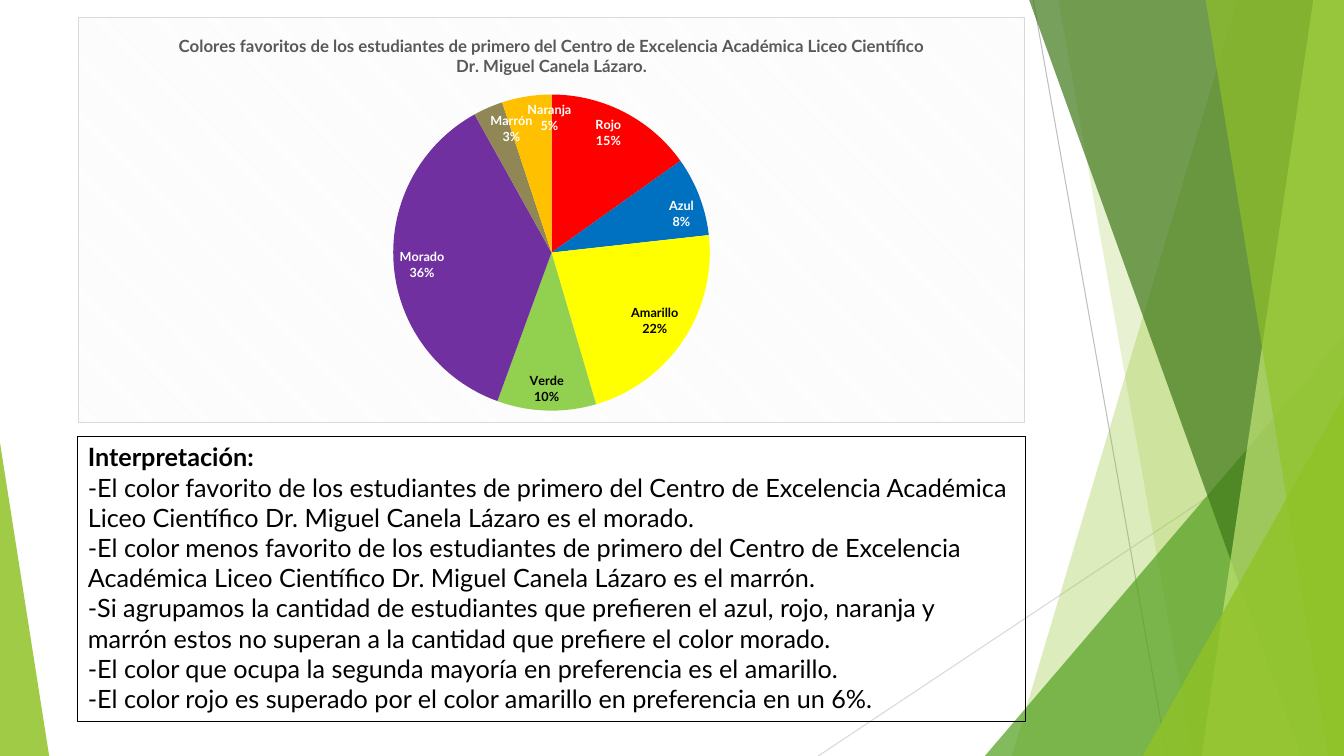
import pptx
import pptx.chart.data
import pptx.dml.color
import pptx.enum.chart
import pptx.enum.shapes
import pptx.enum.text
import pptx.oxml
import pptx.oxml.ns
import pptx.util
from lxml import etree

Cm, Pt = pptx.util.Cm, pptx.util.Pt
RGBColor = pptx.dml.color.RGBColor
qn = pptx.oxml.ns.qn

BLACK = RGBColor(0x00, 0x00, 0x00)
WHITE = RGBColor(0xFF, 0xFF, 0xFF)
TITLE_GRAY = RGBColor(0x59, 0x59, 0x59)
MID_GRAY = RGBColor(0xBF, 0xBF, 0xBF)
LIGHT_GRAY = RGBColor(0xD9, 0xD9, 0xD9)
LIME = RGBColor(0x90, 0xC2, 0x26)
PALE_LIME = RGBColor(0xC0, 0xE4, 0x74)
GREEN = RGBColor(0x54, 0xA0, 0x21)
DARK_GREEN = RGBColor(0x3F, 0x78, 0x19)

WIDTH, HEIGHT = 33.87, 19.05
SCHOOL = "Centro de Excelencia Académica Liceo Científico Dr. Miguel Canela Lázaro"

# category, percentage, slice colour, label colour
COLORS = [
    ("Rojo", 15, RGBColor(0xFF, 0x00, 0x00), WHITE),
    ("Azul", 8, RGBColor(0x00, 0x70, 0xC0), WHITE),
    ("Amarillo", 22, RGBColor(0xFF, 0xFF, 0x00), BLACK),
    ("Verde", 10, RGBColor(0x92, 0xD0, 0x50), BLACK),
    ("Morado", 36, RGBColor(0x70, 0x30, 0xA0), WHITE),
    ("Marrón", 3, RGBColor(0x91, 0x86, 0x55), WHITE),
    ("Naranja", 5, RGBColor(0xFF, 0xC0, 0x00), WHITE),
]

FINDINGS = [
    f"-El color favorito de los estudiantes de primero del {SCHOOL} es el morado.",
    f"-El color menos favorito de los estudiantes de primero del {SCHOOL} es el marrón.",
    "-Si agrupamos la cantidad de estudiantes que prefieren el azul, rojo, naranja y "
    "marrón estos no superan a la cantidad que prefiere el color morado.",
    "-El color que ocupa la segunda mayoría en preferencia es el amarillo.",
    "-El color rojo es superado por el color amarillo en preferencia en un 6%.",
]

CHART_AREA = """<c:spPr xmlns:c="http://schemas.openxmlformats.org/drawingml/2006/chart"
 xmlns:a="http://schemas.openxmlformats.org/drawingml/2006/main">
<a:pattFill prst="dkDnDiag"><a:fgClr><a:srgbClr val="F2F2F2"/></a:fgClr>
<a:bgClr><a:srgbClr val="FFFFFF"/></a:bgClr></a:pattFill>
<a:ln w="9525"><a:solidFill><a:srgbClr val="D9D9D9"/></a:solidFill></a:ln></c:spPr>"""


class Deck:
    font = "Lato"

    def __init__(self):
        self.prs = pptx.Presentation()
        self.prs.slide_width, self.prs.slide_height = Cm(WIDTH), Cm(HEIGHT)
        self.s = self.prs.slides.add_slide(self.prs.slide_layouts[1])
        title = self.s.shapes.title.element
        title.getparent().remove(title)

    def style(self, font, size, color, bold=False):
        font.name, font.size, font.bold = self.font, Pt(size), bold
        font.color.rgb = color

    def line(self, x1, y1, x2, y2, color):
        c = self.s.shapes.add_connector(
            pptx.enum.shapes.MSO_CONNECTOR.STRAIGHT, Cm(x1), Cm(y1), Cm(x2), Cm(y2))
        c.line.color.rgb, c.line.width = color, Pt(0.75)
        etree.SubElement(c.element.spPr, qn("a:effectLst"))

    def tint(self, sp, color, opacity):
        """Flat fill with an opacity in percent, no outline and no shadow."""
        sp.shadow.inherit = False
        sp.fill.solid()
        sp.fill.fore_color.rgb = color
        sp.line.fill.background()
        rgb = sp.element.spPr.find(qn("a:solidFill"))[0]
        etree.SubElement(rgb, qn("a:alpha")).set("val", str(opacity * 1000))

    def band(self, top_x, bottom_x, color, opacity):
        """Full-height band from a slanted left edge to the slide's right edge."""
        fb = self.s.shapes.build_freeform(Cm(top_x), Cm(-0.02))
        fb.add_line_segments([(Cm(WIDTH), Cm(-0.02)), (Cm(WIDTH), Cm(HEIGHT)),
                              (Cm(bottom_x), Cm(HEIGHT))], close=True)
        self.tint(fb.convert_to_shape(), color, opacity)

    def corner(self, x, y, w, apex, color, opacity):
        """Triangle standing on the bottom edge; apex 0 is left, 1 is right."""
        sp = self.s.shapes.add_shape(
            pptx.enum.shapes.MSO_SHAPE.ISOSCELES_TRIANGLE,
            Cm(x), Cm(y), Cm(w), Cm(HEIGHT - y))
        sp.adjustments[0] = apex
        self.tint(sp, color, opacity)

    def body(self, x, y, w, h, heading, items):
        sp = self.s.placeholders[1]
        self.s.shapes.element.append(sp.element)
        sp.left, sp.top, sp.width, sp.height = Cm(x), Cm(y), Cm(w), Cm(h)
        sp.line.color.rgb, sp.line.width = BLACK, Pt(0.75)
        tf = sp.text_frame
        tf.word_wrap = True
        tf.auto_size = pptx.enum.text.MSO_AUTO_SIZE.NONE
        for i, text in enumerate([heading] + items):
            p = tf.add_paragraph() if i else tf.paragraphs[0]
            p.space_before = Pt(0)
            pPr = p._p.get_or_add_pPr()
            pPr.set("marL", "0")
            pPr.set("indent", "0")
            etree.SubElement(pPr, qn("a:buNone"))
            r = p.add_run()
            r.text = text
            self.style(r.font, 18, BLACK, bold=i == 0)

    def pie(self, x, y, w, h, title, rows):
        data = pptx.chart.data.CategoryChartData()
        data.categories = [row[0] for row in rows]
        data.add_series("Series 1", [row[1] for row in rows])
        chart = self.s.shapes.add_chart(
            pptx.enum.chart.XL_CHART_TYPE.PIE, Cm(x), Cm(y), Cm(w), Cm(h), data).chart
        self.style(chart.font, 10, BLACK)
        chart.has_legend = False
        chart.has_title = True
        r = chart.chart_title.text_frame.paragraphs[0].add_run()
        r.text = title
        self.style(r.font, 12, TITLE_GRAY, bold=True)

        inside_end = pptx.enum.chart.XL_LABEL_POSITION.INSIDE_END
        series = chart.plots[0].series[0]
        labels = series.data_labels
        labels.show_percentage = labels.show_category_name = True
        labels.show_value = False
        labels.position = inside_end
        self.style(labels.font, 9, WHITE, bold=True)
        for i, (_, _, color, label_color) in enumerate(rows):
            point = series.points[i]
            point.format.fill.solid()
            point.format.fill.fore_color.rgb = color
            if label_color != WHITE:
                self.style(point.data_label.font, 9, label_color, bold=True)
                point.data_label.position = inside_end
        self.finish_pie(chart.element)

    def finish_pie(self, space):
        """Label contents, plot position and patterned chart area."""
        for label in space.iter(qn("c:dLbl")):
            for tag, val in (("c:showVal", "0"), ("c:showCatName", "1"),
                             ("c:showPercent", "1")):
                label.find(qn(tag)).set("val", val)
        for flag in list(space.iter(qn("c:showBubbleSize"))):
            separator = etree.Element(qn("c:separator"))
            separator.text = "\n"
            flag.addnext(separator)

        plot_area = next(space.iter(qn("c:plotArea")))
        layout = plot_area.find(qn("c:layout"))
        if layout is None:
            layout = etree.Element(qn("c:layout"))
            plot_area.insert(0, layout)
        manual = etree.SubElement(layout, qn("c:manualLayout"))
        for tag, val in (("layoutTarget", "inner"), ("xMode", "edge"), ("yMode", "edge"),
                         ("x", "0.33"), ("y", "0.19"), ("w", "0.34"), ("h", "0.78")):
            etree.SubElement(manual, qn("c:" + tag)).set("val", val)
        space.find(qn("c:chart")).addnext(pptx.oxml.parse_xml(CHART_AREA))


def main():
    d = Deck()
    d.line(26.04, 0, 29.41, HEIGHT, MID_GRAY)
    d.line(WIDTH, 10.24, 20.62, HEIGHT, LIGHT_GRAY)
    d.band(31.19, 25.5, LIME, 30)
    d.band(26.67, 30.05, LIME, 20)
    d.corner(24.82, 8.46, WIDTH - 24.82, 1, GREEN, 72)
    d.band(25.93, 32.79, DARK_GREEN, 70)
    d.band(33.1, 30.28, PALE_LIME, 70)
    d.band(30.38, 33.48, LIME, 65)
    d.corner(28.8, 9.98, WIDTH - 28.8, 1, LIME, 80)
    d.corner(0, 11.15, 1.24, 0, LIME, 85)
    d.body(1.96, 11, 23.88, 7.19, "Interpretación:", FINDINGS)
    d.pie(1.96, 0.43, 23.88, 10.24,
          f"Colores favoritos de los estudiantes de primero del {SCHOOL}.", COLORS)
    d.prs.save("out.pptx")


if __name__ == "__main__":
    main()
